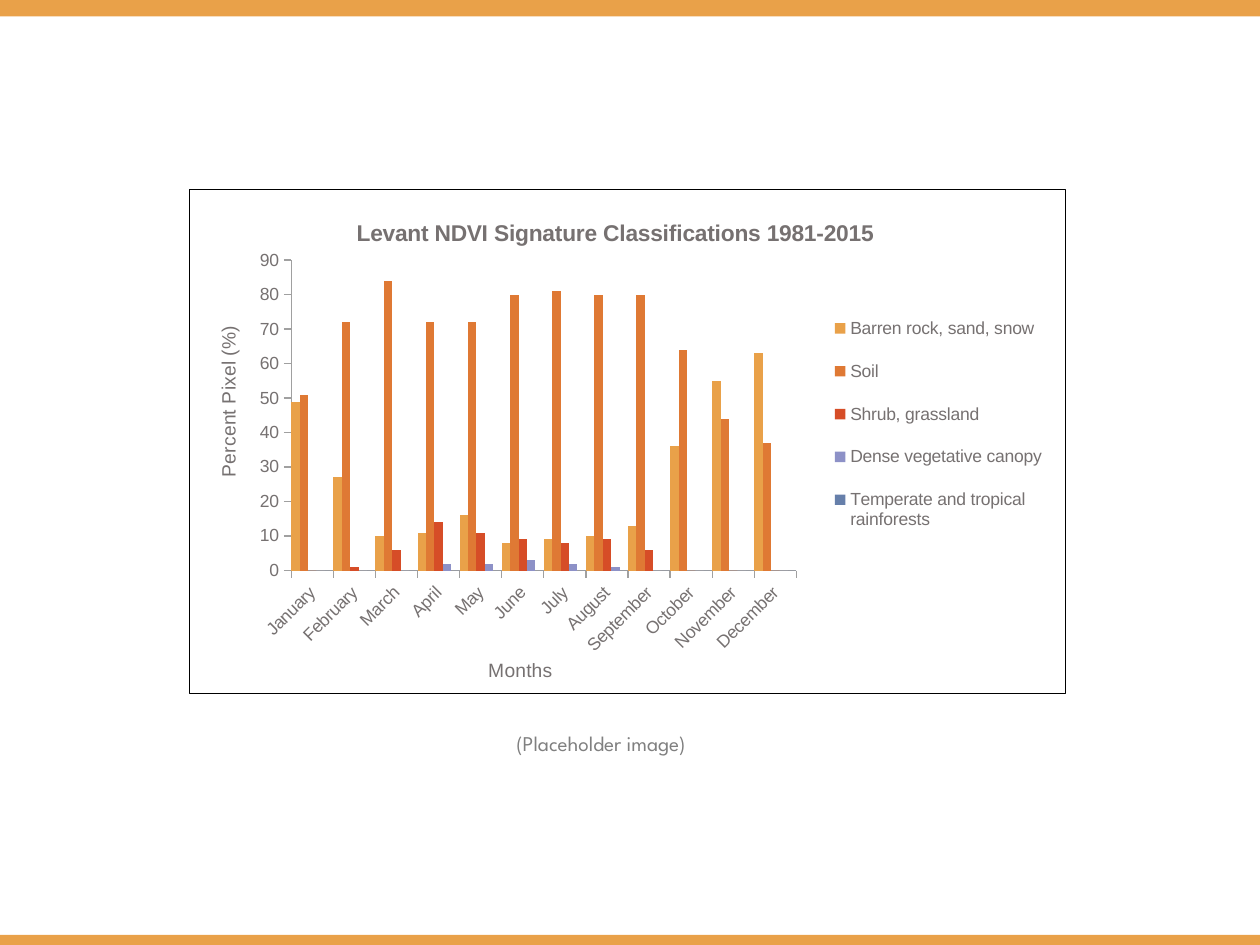
import pptx
import pptx.chart.data
import pptx.dml.color
import pptx.enum.chart
import pptx.enum.shapes
import pptx.enum.text
import pptx.oxml
import pptx.oxml.ns
import pptx.util
from pptx.util import Inches

ORANGE = "E9A149"
TEXT_GREY = "767171"
AXIS_GREY = "A0A0A0"
MONTHS = ["January", "February", "March", "April", "May", "June", "July",
          "August", "September", "October", "November", "December"]
LAND_COVER = [
    ("Barren rock, sand, snow", ORANGE, [49, 27, 10, 11, 16, 8, 9, 10, 13, 36, 55, 63]),
    ("Soil", "DF7934", [51, 72, 84, 72, 72, 80, 81, 80, 80, 64, 44, 37]),
    ("Shrub, grassland", "D64D27", [0, 1, 6, 14, 11, 9, 8, 9, 6, 0, 0, 0]),
    ("Dense vegetative canopy", "8D91C7", [0, 0, 0, 2, 2, 3, 2, 1, 0, 0, 0, 0]),
    ("Temperate and tropical rainforests", "667FAA", [0] * 12),
]


def color(hex_string):
    """Return the colour for a hex string."""
    return pptx.dml.color.RGBColor.from_string(hex_string)


def style_font(font, name, size, hex_string, bold=False):
    """Set the face, size, colour and weight of a font."""
    font.name = name
    font.size = pptx.util.Pt(size)
    font.bold = bold
    font.color.rgb = color(hex_string)


def add_band(slide, left, top, width, height):
    """Add a plain orange band."""
    band = slide.shapes.add_shape(
        pptx.enum.shapes.MSO_SHAPE.RECTANGLE, left, top, width, height)
    band.shadow.inherit = False
    band.fill.solid()
    band.fill.fore_color.rgb = color(ORANGE)
    band.line.fill.background()


def set_layout(element, x, y, width=None, height=None, inner=False):
    """Place a chart part by fractions of the chart area."""
    settings = [("layoutTarget", "inner")] if inner else []
    settings += [("xMode", "edge"), ("yMode", "edge"), ("x", x), ("y", y)]
    if width is not None:
        settings += [("w", width), ("h", height)]
    children = "".join(f'<c:{tag} val="{value}"/>' for tag, value in settings)
    layout = pptx.oxml.parse_xml(
        f'<c:layout {pptx.oxml.ns.nsdecls("c")}><c:manualLayout>'
        f'{children}</c:manualLayout></c:layout>')
    qn = pptx.oxml.ns.qn
    present = element.find(qn("c:layout"))
    overlay = element.find(qn("c:overlay"))
    if present is not None:
        element.replace(present, layout)
    elif overlay is not None:
        overlay.addprevious(layout)
    else:
        element.insert(0, layout)


def set_title(title, text, size, x, y, bold=False):
    """Write and place a chart or axis title."""
    title.text_frame.text = text
    run = title.text_frame.paragraphs[0].runs[0]
    style_font(run.font, "Arial", size, TEXT_GREY, bold)
    set_layout(title.element if hasattr(title, "element") else title._element, x, y)


def set_rotation(body, degrees):
    """Turn the text of a chart part."""
    body.set("rot", str(degrees * 60000))
    body.set("vert", "horz")


def style_axis(axis, text, x, y):
    """Style an axis and give it a title."""
    axis.has_major_gridlines = False
    axis.major_tick_mark = pptx.enum.chart.XL_TICK_MARK.OUTSIDE
    axis.minor_tick_mark = pptx.enum.chart.XL_TICK_MARK.NONE
    axis.format.line.color.rgb = color(AXIS_GREY)
    axis.format.line.width = pptx.util.Pt(0.75)
    style_font(axis.tick_labels.font, "Arial", 10, TEXT_GREY)
    axis.has_title = True
    set_title(axis.axis_title, text, 11, x, y)


def add_border(chart):
    """Give the chart area a white fill and a thin black border."""
    border = pptx.oxml.parse_xml(
        f'<c:spPr {pptx.oxml.ns.nsdecls("c", "a")}>'
        '<a:solidFill><a:srgbClr val="FFFFFF"/></a:solidFill>'
        '<a:ln w="9525"><a:solidFill><a:srgbClr val="000000"/></a:solidFill></a:ln>'
        '</c:spPr>')
    chart.element.find(pptx.oxml.ns.qn("c:chart")).addnext(border)


def add_land_cover_chart(slide, left, top, width, height):
    """Add the monthly column chart of land cover classes."""
    data = pptx.chart.data.CategoryChartData()
    data.categories = MONTHS
    for name, _, values in LAND_COVER:
        data.add_series(name, values)
    chart = slide.shapes.add_chart(
        pptx.enum.chart.XL_CHART_TYPE.COLUMN_CLUSTERED,
        left, top, width, height, data).chart
    style_font(chart.font, "Arial", 10, TEXT_GREY)
    add_border(chart)

    chart.has_title = True
    set_title(chart.chart_title, "Levant NDVI Signature Classifications 1981-2015",
              13, 0.186, 0.05, bold=True)
    style_axis(chart.category_axis, "Months", 0.337, 0.92)
    style_axis(chart.value_axis, "Percent Pixel (%)", 0.025, 0.263)
    chart.value_axis.minimum_scale = 0
    chart.value_axis.maximum_scale = 90
    chart.value_axis.major_unit = 10
    qn = pptx.oxml.ns.qn
    set_rotation(chart.value_axis.axis_title.text_frame._txBody.find(qn("a:bodyPr")), -90)
    labels = chart.category_axis._element.find(qn("c:txPr"))
    set_rotation(labels.find(qn("a:bodyPr")), -45)

    chart.has_legend = True
    chart.legend.position = pptx.enum.chart.XL_LEGEND_POSITION.RIGHT
    chart.legend.include_in_layout = False
    style_font(chart.legend.font, "Arial", 10, TEXT_GREY)
    set_layout(chart.legend._element, 0.725, 0.21, 0.26, 0.51)

    plot = chart.plots[0]
    plot.gap_width = 0
    plot.overlap = 0
    plot.vary_by_categories = False
    for series, (_, hex_string, _) in zip(plot.series, LAND_COVER):
        series.format.fill.solid()
        series.format.fill.fore_color.rgb = color(hex_string)
        series.invert_if_negative = False
    plot_area = chart.element.find(".//" + qn("c:plotArea"))
    set_layout(plot_area, 0.116, 0.14, 0.577, 0.616, inner=True)


def add_caption(slide, left, top, width, height):
    """Add the caption below the chart."""
    text_frame = slide.shapes.add_textbox(left, top, width, height).text_frame
    text_frame.word_wrap = True
    text_frame.auto_size = pptx.enum.text.MSO_AUTO_SIZE.SHAPE_TO_FIT_TEXT
    text_frame.text = "(Placeholder image)"
    run = text_frame.paragraphs[0].runs[0]
    style_font(run.font, "League Spartan", 12, "808080")


def main():
    """Build and save the slide."""
    presentation = pptx.Presentation()
    presentation.slide_width = Inches(10)
    presentation.slide_height = Inches(7.5)
    slide = presentation.slides.add_slide(presentation.slide_layouts[6])
    add_band(slide, 0, 0, Inches(10), Inches(0.13))
    add_band(slide, 0, Inches(7.42), Inches(10), Inches(0.08))
    add_land_cover_chart(slide, Inches(1.5), Inches(1.5), Inches(6.96), Inches(4.01))
    add_caption(slide, Inches(4), Inches(5.75), Inches(2.25), Inches(0.3))
    presentation.save("out.pptx")


if __name__ == "__main__":
    main()
